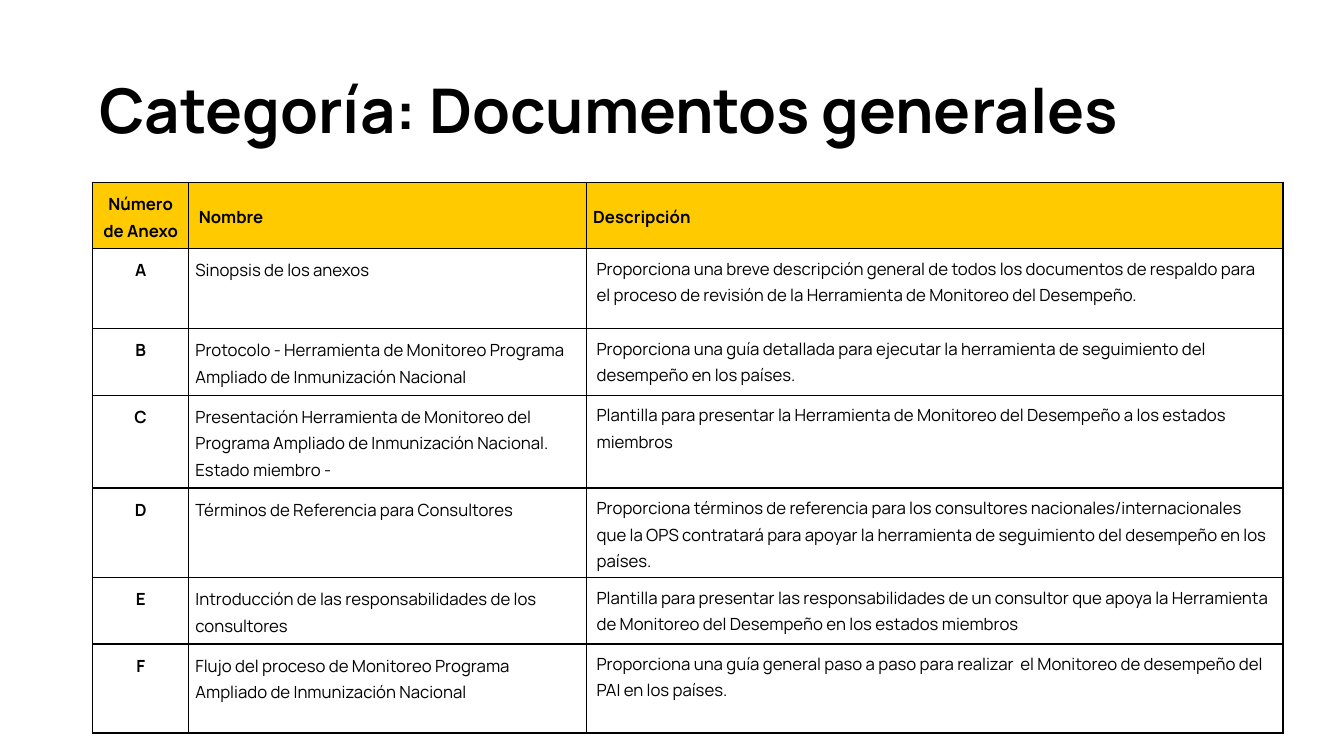
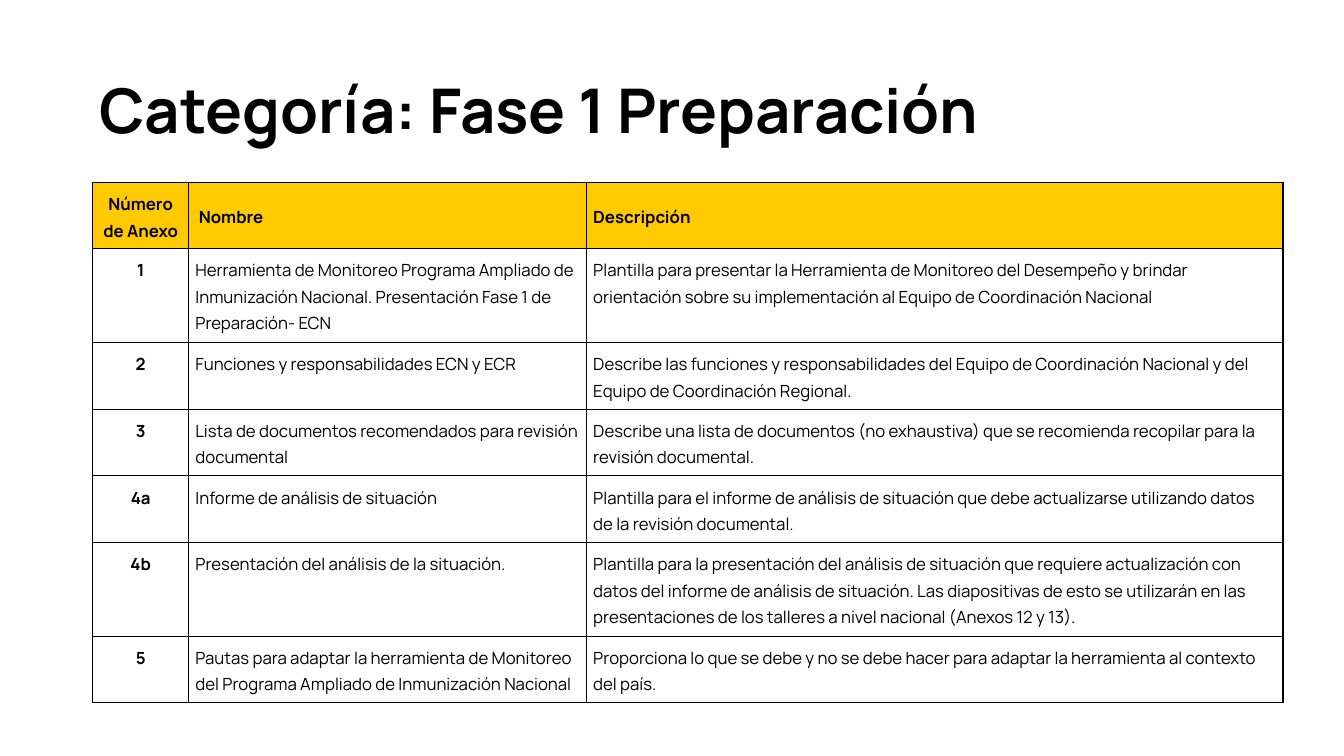
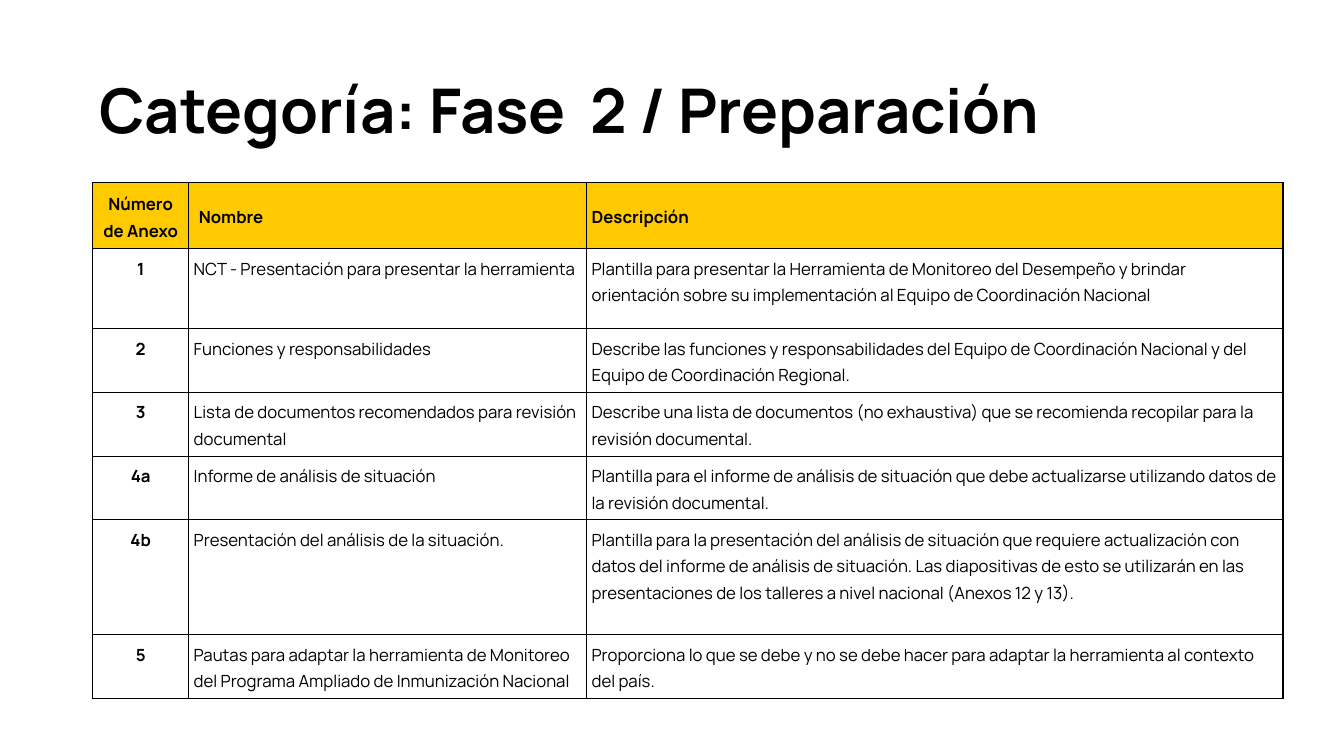
"""Build three slides that list the annexes of each category in a table."""
from dataclasses import dataclass

from lxml import etree
from pptx import Presentation
from pptx.dml.color import RGBColor
from pptx.enum import text
from pptx.oxml import ns
from pptx.util import Pt


@dataclass(frozen=True)
class Theme:
    font: str = "Manrope"
    ink: str = "000000"
    header_fill: str = "FFCB00"
    title_size: int = 44
    table_size: int = 12
    title_spacing: float = 0.9
    table_spacing: float = 1.15
    rule: int = 1


THEME = Theme()
SLIDE_SIZE = (960, 540)
TITLE_BOX = (66.2, 28.8, 864.7, 104.4)
TITLE_INSETS = (4.8, 2.9)
TABLE_LEFT, TABLE_TOP = 66.2, 130.3
COLUMN_WIDTHS = (68.6, 284.2, 497.5)
HEADER_HEIGHT = 47.1
EVEN, WIDE, TIGHT = (4.8, 4.8), (7.2, 3.6), (3.6, 3.6)

HEADINGS = ("Número de Anexo", "Nombre", "Descripción")

CATEGORIES = [
    {
        "title": "Categoría: Documentos generales",
        "header_insets": (EVEN, WIDE, EVEN),
        "body_insets": (EVEN, EVEN, WIDE),
        "heights": (57.1, 47.1, 66.4, 63.6, 47.1, 63.6),
        "annexes": [
            ("A", "Sinopsis de los anexos",
             "Proporciona una breve descripción general de todos los documentos de respaldo "
             "para el proceso de revisión de la Herramienta de Monitoreo del Desempeño."),
            ("B", "Protocolo - Herramienta de Monitoreo Programa Ampliado de Inmunización Nacional",
             "Proporciona una guía detallada para ejecutar la herramienta de seguimiento del "
             "desempeño en los países."),
            ("C", "Presentación Herramienta de Monitoreo del Programa Ampliado de Inmunización "
             "Nacional. Estado miembro -",
             "Plantilla para presentar la Herramienta de Monitoreo del Desempeño a los estados "
             "miembros"),
            ("D", "Términos de Referencia para Consultores",
             "Proporciona términos de referencia para los consultores "
             "nacionales/internacionales que la OPS contratará para apoyar la herramienta de "
             "seguimiento del desempeño en los países."),
            ("E", "Introducción de las responsabilidades de los consultores",
             "Plantilla para presentar las responsabilidades de un consultor que apoya la "
             "Herramienta de Monitoreo del Desempeño en los estados miembros"),
            ("F", "Flujo del proceso de Monitoreo Programa Ampliado de Inmunización Nacional",
             "Proporciona una guía general paso a paso para realizar  el Monitoreo de "
             "desempeño del PAI en los países."),
        ],
    },
]

PHASE_DESCRIPTIONS = (
    "Plantilla para presentar la Herramienta de Monitoreo del Desempeño y brindar orientación "
    "sobre su implementación al Equipo de Coordinación Nacional",
    "Describe las funciones y responsabilidades del Equipo de Coordinación Nacional y del "
    "Equipo de Coordinación Regional.",
    "Describe una lista de documentos (no exhaustiva) que se recomienda recopilar para la "
    "revisión documental.",
    "Plantilla para el informe de análisis de situación que debe actualizarse utilizando datos "
    "de la revisión documental.",
    "Plantilla para la presentación del análisis de situación que requiere actualización con "
    "datos del informe de análisis de situación. Las diapositivas de esto se utilizarán en las "
    "presentaciones de los talleres a nivel nacional (Anexos 12 y 13).",
    "Proporciona lo que se debe y no se debe hacer para adaptar la herramienta al contexto del "
    "país.",
)
PHASE_NUMBERS = ("1", "2", "3", "4a", "4b", "5")
SHARED_NAMES = (
    "Lista de documentos recomendados para revisión documental",
    "Informe de análisis de situación",
    "Presentación del análisis de la situación.",
    "Pautas para adaptar la herramienta de Monitoreo del Programa Ampliado de Inmunización "
    "Nacional",
)


def phase_annexes(*first_names):
    return list(zip(PHASE_NUMBERS, first_names + SHARED_NAMES, PHASE_DESCRIPTIONS))


CATEGORIES += [
    {
        "title": "Categoría: Fase 1 Preparación",
        "header_insets": (EVEN, WIDE, EVEN),
        "body_insets": (EVEN, EVEN, EVEN),
        "heights": (67, 47.6, 47.6, 47.6, 67, 47.6),
        "annexes": phase_annexes(
            "Herramienta de Monitoreo Programa Ampliado de Inmunización Nacional. "
            "Presentación Fase 1 de Preparación- ECN",
            "Funciones y responsabilidades ECN y ECR"),
    },
    {
        "title": "Categoría: Fase  2 / Preparación",
        "header_insets": (EVEN, WIDE, TIGHT),
        "body_insets": (TIGHT, TIGHT, TIGHT),
        "heights": (57.1, 45.5, 45.5, 45.5, 82.1, 45.5),
        "annexes": phase_annexes(
            "NCT - Presentación para presentar la herramienta",
            "Funciones y responsabilidades"),
    },
]


def write(paragraph, words, size, bold, spacing, centred=False):
    paragraph.alignment = text.PP_ALIGN.CENTER if centred else text.PP_ALIGN.LEFT
    paragraph.line_spacing = spacing
    run = paragraph.add_run()
    run.text = words
    run.font.name, run.font.size, run.font.bold = THEME.font, Pt(size), bold
    run.font.color.rgb = RGBColor.from_string(THEME.ink)


def set_insets(holder, insets):
    holder.margin_left = holder.margin_right = Pt(insets[0])
    holder.margin_top = holder.margin_bottom = Pt(insets[1])


def draw_borders(cell):
    properties = cell._tc.get_or_add_tcPr()
    for index, side in enumerate(("lnL", "lnR", "lnT", "lnB")):
        line = etree.Element(ns.qn(f"a:{side}"), w=str(Pt(THEME.rule)))
        fill = etree.SubElement(line, ns.qn("a:solidFill"))
        etree.SubElement(fill, ns.qn("a:srgbClr"), val=THEME.ink)
        properties.insert(index, line)


def fill_cell(cell, words, column, insets, is_header):
    set_insets(cell, insets)
    if is_header:
        cell.vertical_anchor = text.MSO_ANCHOR.MIDDLE
        cell.fill.solid()
        cell.fill.fore_color.rgb = RGBColor.from_string(THEME.header_fill)
    else:
        cell.vertical_anchor = text.MSO_ANCHOR.TOP
        cell.fill.background()
    draw_borders(cell)
    write(cell.text_frame.paragraphs[0], words, THEME.table_size,
          is_header or column == 0, THEME.table_spacing, column == 0)


def add_annex_table(slide, category):
    rows = [HEADINGS] + category["annexes"]
    heights = (HEADER_HEIGHT,) + category["heights"]
    table = slide.shapes.add_table(
        len(rows), len(HEADINGS), Pt(TABLE_LEFT), Pt(TABLE_TOP),
        Pt(sum(COLUMN_WIDTHS)), Pt(sum(heights))).table
    table.horz_banding = False
    for column, width in zip(table.columns, COLUMN_WIDTHS):
        column.width = Pt(width)
    for r, (row, height) in enumerate(zip(rows, heights)):
        table.rows[r].height = Pt(height)
        insets = category["body_insets" if r else "header_insets"]
        for c, words in enumerate(row):
            fill_cell(table.cell(r, c), words, c, insets[c], r == 0)


def add_title(slide, words):
    frame = slide.shapes.title.text_frame
    frame.word_wrap = True
    frame.auto_size = text.MSO_AUTO_SIZE.NONE
    frame.vertical_anchor = text.MSO_ANCHOR.MIDDLE
    set_insets(frame, TITLE_INSETS)
    write(frame.paragraphs[0], words, THEME.title_size, True, THEME.title_spacing)


def main():
    deck = Presentation()
    deck.slide_width, deck.slide_height = map(Pt, SLIDE_SIZE)
    layout = deck.slide_layouts.get_by_name("Title Only")
    heading = layout.placeholders[0]
    heading.left, heading.top, heading.width, heading.height = map(Pt, TITLE_BOX)
    for category in CATEGORIES:
        slide = deck.slides.add_slide(layout)
        add_title(slide, category["title"])
        add_annex_table(slide, category)
    deck.save("out.pptx")


if __name__ == "__main__":
    main()
